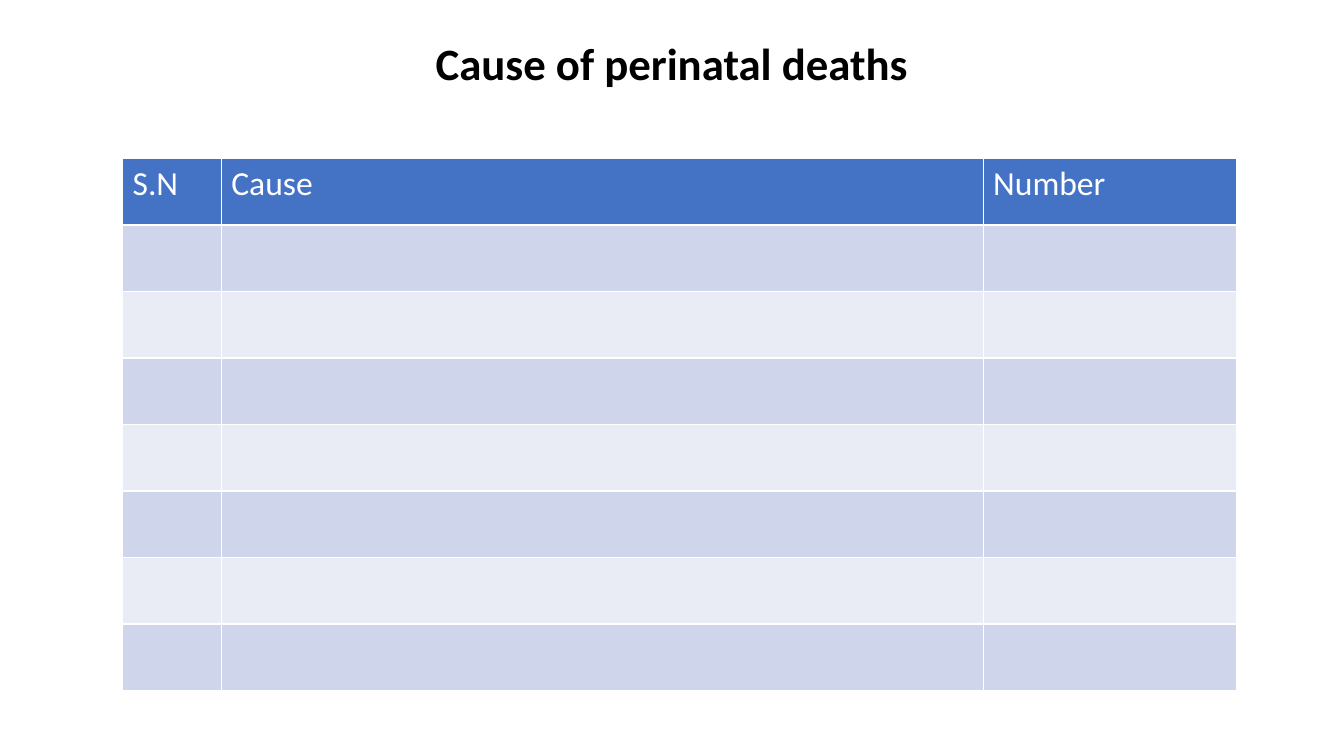
import dataclasses

import pptx
import pptx.dml.color
import pptx.enum.text
import pptx.util

Pt = pptx.util.Pt
ALIGN = pptx.enum.text.PP_ALIGN
ANCHOR = pptx.enum.text.MSO_ANCHOR


@dataclasses.dataclass(frozen=True)
class Theme:
    font: str = "Calibri"
    title_size: float = 32
    header_size: float = 24
    title_color: str = "000000"
    header_color: str = "FFFFFF"
    header_fill: str = "4472C4"
    band_fills: tuple = ("CFD5EA", "E9EBF5")


THEME = Theme()
HEADINGS = ("S.N", "Cause", "Number")
COLUMN_WIDTHS = (71, 548, 182)
EMPTY_ROWS = 7


def rgb(color):
    return pptx.dml.color.RGBColor.from_string(color)


def write_text(frame, text, *, size, color, bold=False, align=ALIGN.LEFT,
               anchor=ANCHOR.TOP, line_spacing=None):
    """Write one formatted paragraph into a text frame."""
    frame.word_wrap = True
    frame.vertical_anchor = anchor
    paragraph = frame.paragraphs[0]
    paragraph.alignment = align
    paragraph.line_spacing = line_spacing
    run = paragraph.add_run()
    run.text = text
    run.font.name = THEME.font
    run.font.size = Pt(size)
    run.font.bold = bold
    run.font.color.rgb = rgb(color)


def place_title(slide, text, left, top, width, height):
    title = slide.shapes.title
    title.left, title.top = Pt(left), Pt(top)
    title.width, title.height = Pt(width), Pt(height)
    write_text(title.text_frame, text, size=THEME.title_size,
               color=THEME.title_color, bold=True, align=ALIGN.CENTER,
               anchor=ANCHOR.MIDDLE, line_spacing=0.9)


def add_cause_table(slide, left, top, width, height):
    row_count = EMPTY_ROWS + 1
    table = slide.shapes.add_table(
        row_count, len(HEADINGS), Pt(left), Pt(top), Pt(width), Pt(height)).table

    # Column widths share the box in proportion; rows are equal
    for column, share in zip(table.columns, COLUMN_WIDTHS):
        column.width = Pt(width * share / sum(COLUMN_WIDTHS))
    for row in table.rows:
        row.height = Pt(height / row_count)

    # Header row
    for cell, heading in zip(table.rows[0].cells, HEADINGS):
        write_text(cell.text_frame, heading, size=THEME.header_size,
                   color=THEME.header_color)

    # Header and alternating band fills
    for index, row in enumerate(table.rows):
        fill = THEME.band_fills[(index - 1) % 2] if index else THEME.header_fill
        for cell in row.cells:
            cell.fill.solid()
            cell.fill.fore_color.rgb = rgb(fill)


def main():
    presentation = pptx.Presentation()
    presentation.slide_width = Pt(960)
    presentation.slide_height = Pt(540)
    slide = presentation.slides.add_slide(
        presentation.slide_layouts.get_by_name("Title Only"))
    place_title(slide, "Cause of perinatal deaths", 66, 21, 828, 52.5)
    add_cause_table(slide, 87.5, 113.3, 795.5, 380)
    presentation.save("out.pptx")


if __name__ == "__main__":
    main()
